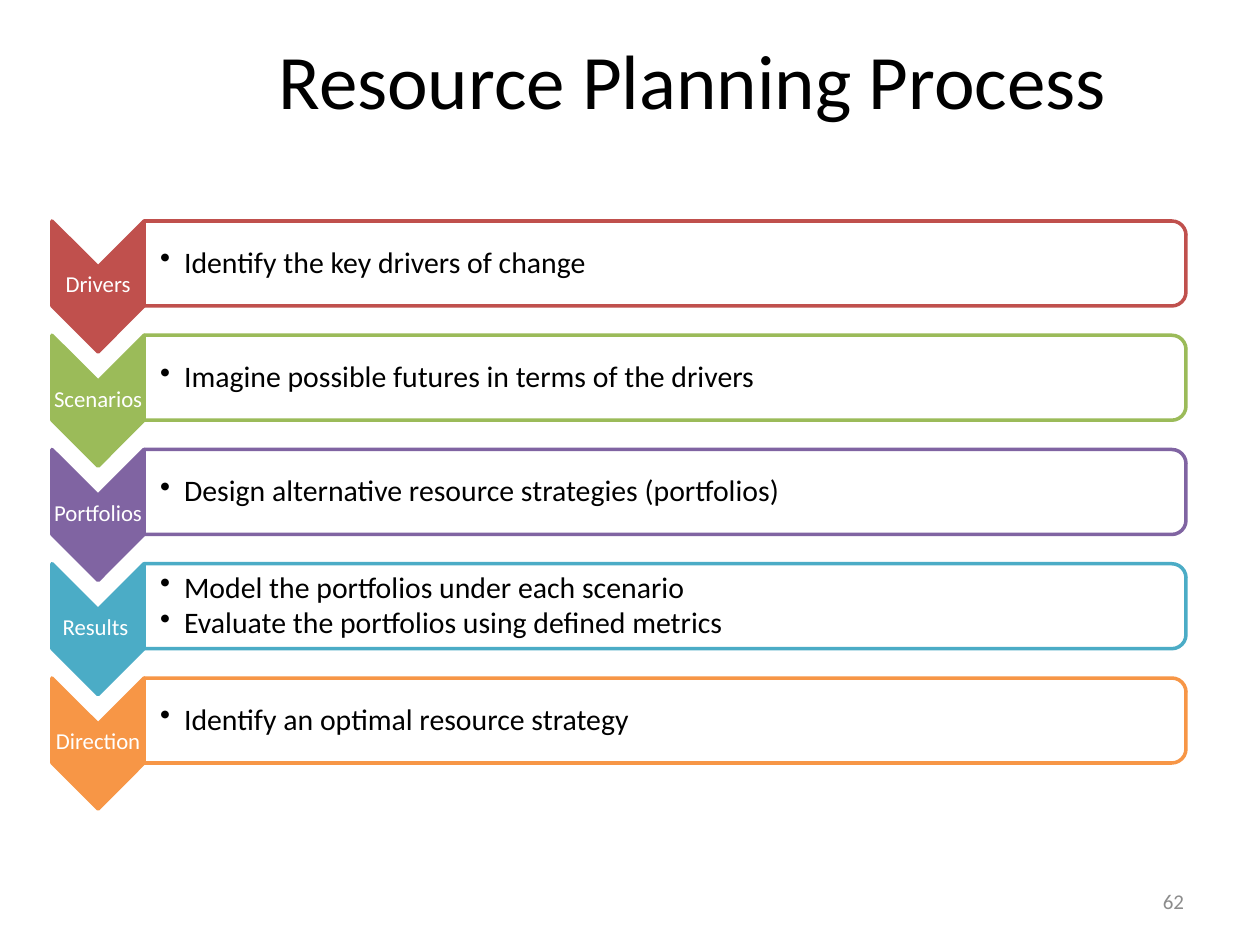
from lxml.etree import SubElement
from pptx import Presentation
from pptx.dml.color import RGBColor
from pptx.enum.shapes import MSO_SHAPE as SHAPE
from pptx.enum.text import MSO_ANCHOR as ANCHOR, PP_ALIGN as ALIGN
from pptx.oxml.ns import qn
from pptx.util import Pt

PX = 914400 / 126
FONT = "Calibri"
COLORS = {
    "text": "000000", "white": "FFFFFF", "number": "8C8C8C",
    "red": "C0504D", "green": "9BBB59", "purple": "8064A2",
    "blue": "4BACC6", "orange": "F79646",
}
STEPS = [
    ("Drivers", "red", ["Identify the key drivers of change"]),
    ("Scenarios", "green", ["Imagine possible futures in terms of the drivers"]),
    ("Portfolios", "purple", ["Design alternative resource strategies (portfolios)"]),
    ("Results ", "blue", ["Model the portfolios under each scenario",
                          "Evaluate the portfolios using defined metrics"]),
    ("Direction", "orange", ["Identify an optimal resource strategy"]),
]


def emu(px):
    """Convert px to EMU."""
    return round(px * PX)


def rgb(name):
    """Look up a named colour."""
    return RGBColor.from_string(COLORS[name])


def add_bullet(p):
    """Give a paragraph a hanging bullet."""
    pPr = p._p.get_or_add_pPr()
    pPr.set("marL", str(emu(24)))
    pPr.set("indent", str(-emu(24)))
    SubElement(pPr, qn("a:buChar")).set("char", "•")


def add_text(s, box, lines, size, color, align, insets=(13, 6, 13, 6), spacing=None, bullet=False):
    """Add a vertically centred text box with one paragraph per line."""
    tf = s.shapes.add_textbox(*map(emu, box)).text_frame
    tf.word_wrap = True
    tf.vertical_anchor = ANCHOR.MIDDLE
    tf.margin_left, tf.margin_top, tf.margin_right, tf.margin_bottom = map(emu, insets)
    for i, line in enumerate(lines):
        p = tf.paragraphs[0] if i == 0 else tf.add_paragraph()
        p.alignment = align
        if spacing:
            p.line_spacing = spacing
        if bullet:
            p.space_after = Pt(2)
            add_bullet(p)
        r = p.add_run()
        r.text = line
        r.font.name, r.font.size = FONT, Pt(size)
        r.font.color.rgb = rgb(color)


def add_turned_shape(s, kind, box, fill, line):
    """Add a shape turned by 90 degrees that fills the box once turned."""
    x, y, w, h = box
    shift = (w - h) / 2
    sp = s.shapes.add_shape(kind, *map(emu, (x + shift, y - shift, h, w)))
    sp.rotation = 90
    sp.shadow.inherit = False
    sp.fill.solid()
    sp.fill.fore_color.rgb = rgb(fill)
    sp.line.color.rgb = rgb(line)
    sp.line.width = Pt(2)


def add_step(s, box, label, color, lines):
    """Add one process step: a labelled chevron and its panel of bullets."""
    x, y, w, h = box
    arrow_w = 92
    panel_x, panel_w = x + arrow_w, w - arrow_w
    add_turned_shape(s, SHAPE.CHEVRON, (x, y, arrow_w, h), color, color)
    add_text(s, (x, y + 45, arrow_w, 39), [label], 13, "white", ALIGN.CENTER,
             (1, 1, 1, 1), 0.9)
    add_turned_shape(s, SHAPE.ROUND_2_SAME_RECTANGLE, (panel_x, y, panel_w, 85),
                     "white", color)
    add_text(s, (panel_x, y + 4, panel_w - 4, 77), lines, 17, "text", ALIGN.LEFT,
             (16, 1, 1, 1), 0.9, True)


def add_process(s, box):
    """Stack the steps evenly from the top to the bottom of the box."""
    x, y, w, h = box
    step_h = 131
    pitch = (h - step_h) / (len(STEPS) - 1)
    for i, step in enumerate(STEPS):
        add_step(s, (x, y + i * pitch, w, step_h), *step)


def main():
    """Build and save the slide."""
    prs = Presentation()
    prs.slide_width, prs.slide_height = emu(1260), emu(945)
    s = prs.slides.add_slide(prs.slide_layouts[6])
    add_text(s, (126, 0, 1134, 158), ["Resource Planning Process"], 44, "text", ALIGN.CENTER)
    add_process(s, (52, 221, 1134, 588))
    add_text(s, (903, 876, 294, 50), ["62"], 12, "number", ALIGN.RIGHT)
    prs.save("out.pptx")


if __name__ == "__main__":
    main()
